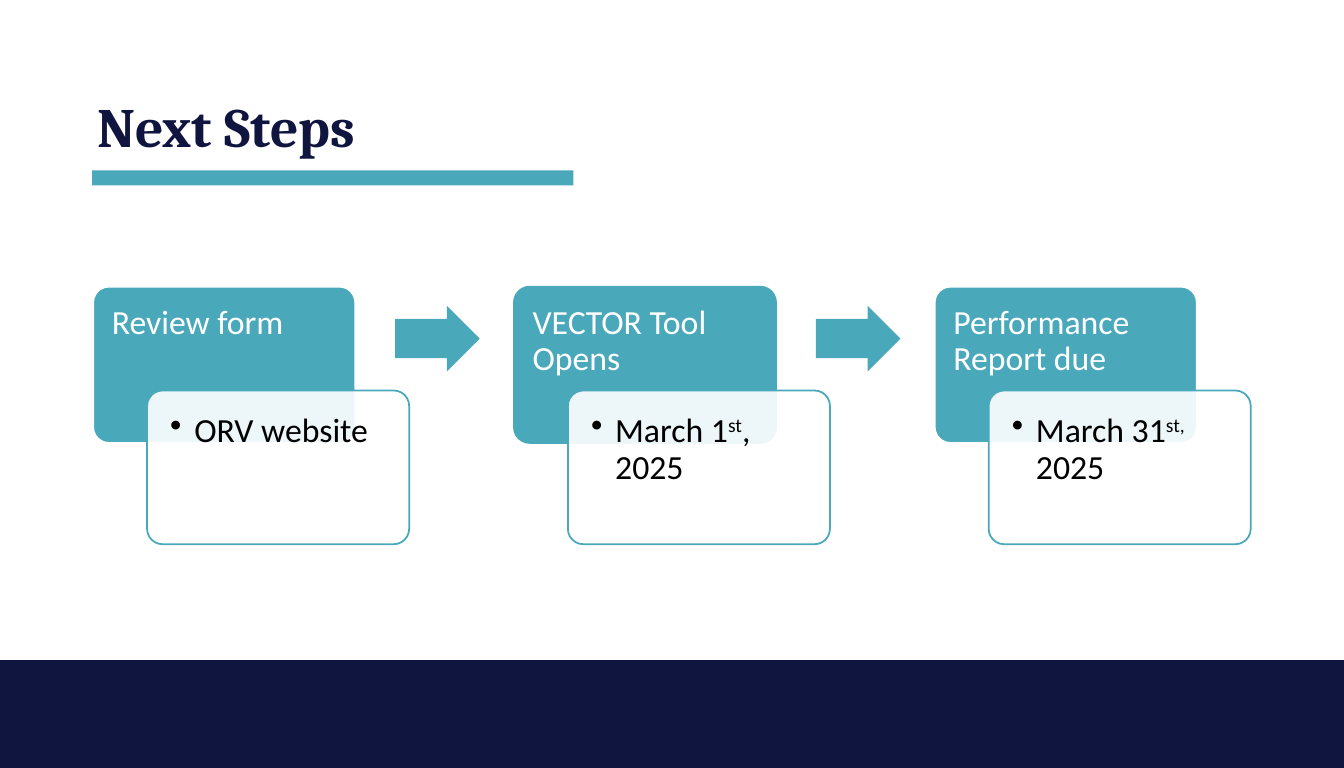
from dataclasses import dataclass

from lxml import etree
from pptx import Presentation
from pptx import util as u
from pptx.dml.color import RGBColor
from pptx.enum import shapes, text
from pptx.oxml.ns import qn


@dataclass(frozen=True)
class Theme:
    teal: str = "4AA8BB"
    navy: str = "0F153E"
    white: str = "FFFFFF"
    black: str = "000000"
    title_font: str = "Cambria"
    body_font: str = "Calibri"
    title_size: float = 31.2
    body_size: float = 19


@dataclass(frozen=True)
class Area:
    left: float
    top: float
    width: float
    height: float

    def shifted(self, distance: float) -> "Area":
        return Area(self.left + distance, self.top, self.width, self.height)

    def lengths(self) -> tuple:
        return tuple(u.Cm(v) for v in (self.left, self.top, self.width, self.height))


@dataclass(frozen=True)
class Span:
    words: str
    raised: bool = False


@dataclass(frozen=True)
class Step:
    heading: str
    detail: tuple
    border: str


THEME = Theme()
KIND = shapes.MSO_SHAPE
PITCH = 8.35
HEADING = Area(1.85, 5.69, 5.2, 3.1)
DETAIL = Area(2.92, 7.75, 5.2, 3.05)
ARROW = Area(7.84, 6.07, 1.68, 1.3)
RULE = Area(1.83, 3.38, 9.55, 0.3)
FOOTER = Area(0, 13.1, 26.67, 2.14)
TITLE = Area(1.68, 1.8, 23.29, 1.55)
INSET = 0.28
INDENT = 0.48

STEPS = (
    Step("Review form", (Span("ORV website"),), THEME.white),
    Step("VECTOR Tool Opens",
         (Span("March 1"), Span("st", True), Span(", 2025")), THEME.teal),
    Step("Performance Report due",
         (Span("March 31"), Span("st,", True), Span(" 2025")), THEME.white),
)


def add_box(page, kind, area: Area, fill: str, border: str = ""):
    box = page.shapes.add_shape(kind, *area.lengths())
    box.shadow.inherit = False
    box.fill.solid()
    box.fill.fore_color.rgb = RGBColor.from_string(fill)
    if border:
        box.line.color.rgb = RGBColor.from_string(border)
        box.line.width = u.Pt(1)
    else:
        box.line.fill.background()
    return box


def add_span(para, span: Span, font: str, size: float, color: str, bold: bool = False) -> None:
    run = para.add_run()
    run.text = span.words
    run.font.name = font
    run.font.size = u.Pt(size)
    run.font.bold = bold
    run.font.color.rgb = RGBColor.from_string(color)
    if span.raised:
        run.font._element.set("baseline", "30000")


def add_card(page, area: Area, fill: str, border: str, spans: tuple, color: str):
    """Draw a rounded card with top-left text and return it."""
    box = add_box(page, KIND.ROUNDED_RECTANGLE, area, fill, border)
    box.adjustments[0] = 0.1
    frame = box.text_frame
    frame.word_wrap = True
    frame.vertical_anchor = text.MSO_ANCHOR.TOP
    frame.margin_left = frame.margin_right = frame.margin_top = u.Cm(INSET)
    para = frame.paragraphs[0]
    para.alignment = text.PP_ALIGN.LEFT
    para.line_spacing = 0.9
    for span in spans:
        add_span(para, span, THEME.body_font, THEME.body_size, color)
    return box


def add_bullet(para) -> None:
    settings = para._p.get_or_add_pPr()
    settings.set("marL", str(u.Cm(INDENT)))
    settings.set("indent", str(-u.Cm(INDENT)))
    etree.SubElement(settings, qn("a:buChar")).set("char", "•")


def set_opacity(box, percent: int) -> None:
    color = box._element.spPr.find(qn("a:solidFill"))[0]
    etree.SubElement(color, qn("a:alpha")).set("val", str(percent * 1000))


def add_step(page, step: Step, shift: float) -> None:
    add_card(page, HEADING.shifted(shift), THEME.teal, step.border,
             (Span(step.heading),), THEME.white)
    detail = add_card(page, DETAIL.shifted(shift), THEME.white, THEME.teal,
                      step.detail, THEME.black)
    set_opacity(detail, 90)
    # The detail text sits slightly further in than the heading text.
    detail.text_frame.margin_left = detail.text_frame.margin_top = u.Cm(INSET + 0.09)
    add_bullet(detail.text_frame.paragraphs[0])


def add_arrow(page, shift: float) -> None:
    arrow = add_box(page, KIND.RIGHT_ARROW, ARROW.shifted(shift), THEME.teal)
    arrow.adjustments[0] = 0.6
    arrow.adjustments[1] = 0.5


def set_title(page, words: str) -> None:
    title = page.shapes.title
    title.left, title.top, title.width, title.height = TITLE.lengths()
    frame = title.text_frame
    frame.auto_size = text.MSO_AUTO_SIZE.NONE
    frame.vertical_anchor = text.MSO_ANCHOR.MIDDLE
    para = frame.paragraphs[0]
    para.alignment = text.PP_ALIGN.LEFT
    para.line_spacing = 0.9
    add_span(para, Span(words), THEME.title_font, THEME.title_size, THEME.navy, bold=True)


def main() -> None:
    deck = Presentation()
    deck.slide_width, deck.slide_height = u.Cm(26.67), u.Cm(15.24)
    page = deck.slides.add_slide(deck.slide_layouts.get_by_name("Title Only"))
    add_box(page, KIND.RECTANGLE, RULE, THEME.teal)
    add_box(page, KIND.RECTANGLE, FOOTER, THEME.navy)
    set_title(page, "Next Steps")
    for index, step in enumerate(STEPS):
        add_step(page, step, index * PITCH)
        if index < len(STEPS) - 1:
            add_arrow(page, index * PITCH)
    deck.save("out.pptx")


if __name__ == "__main__":
    main()
